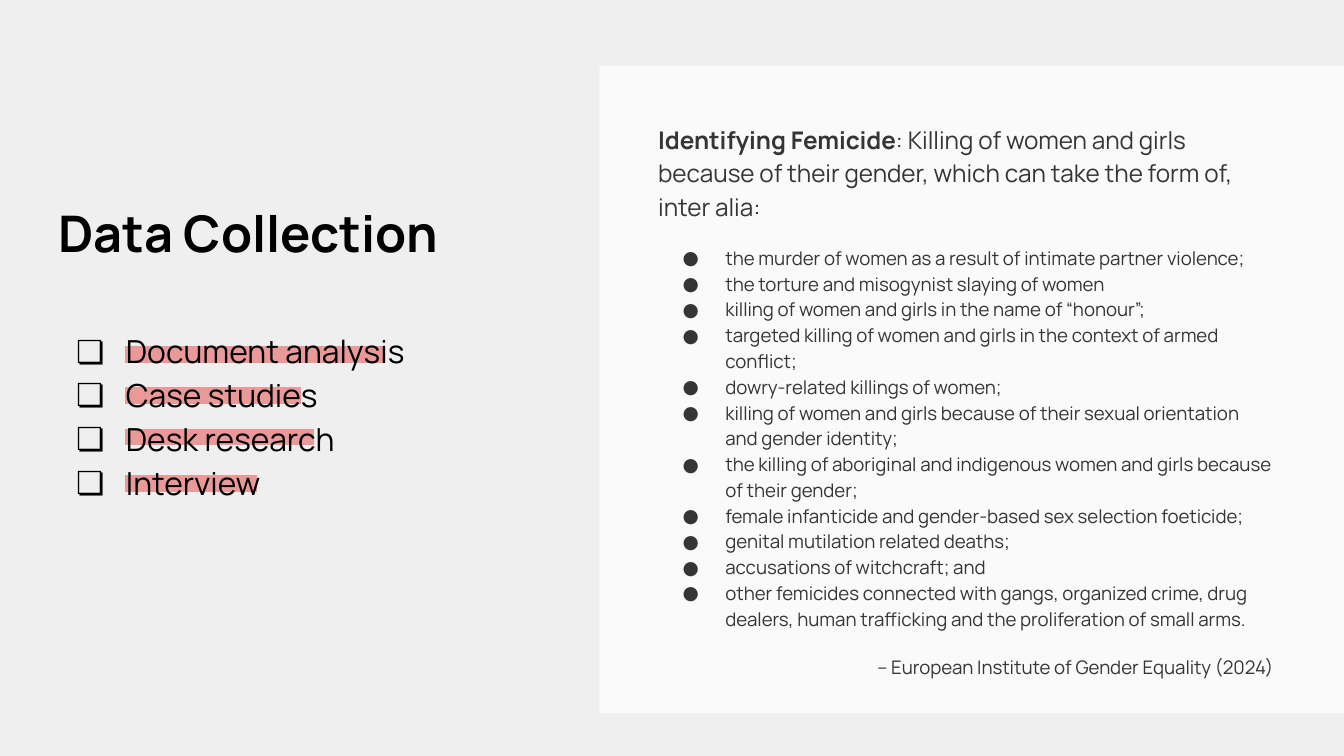
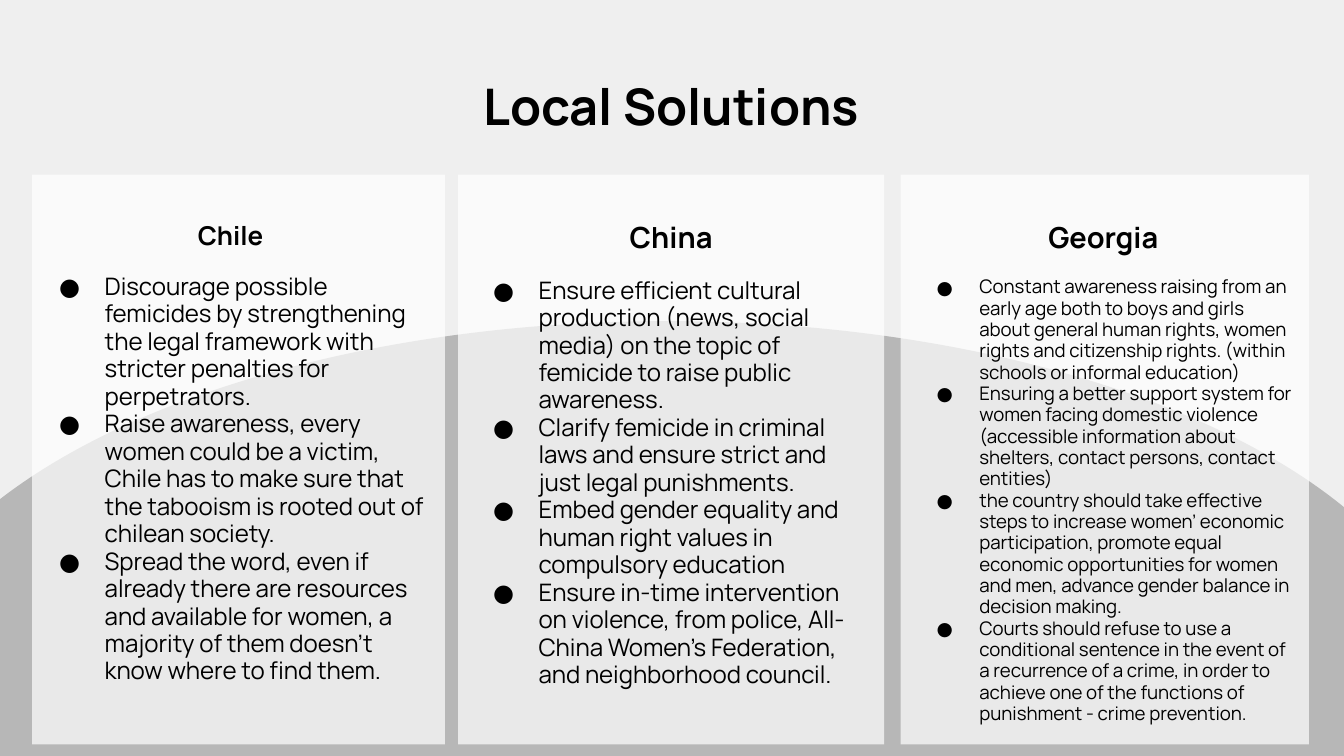
from dataclasses import dataclass

from lxml import etree
from pptx import Presentation
from pptx.dml.color import RGBColor
from pptx.enum import shapes, text
from pptx.oxml.ns import qn
from pptx.util import Cm, Pt


@dataclass(frozen=True)
class Theme:
    font: str = "Manrope"
    background: str = "EFEFEF"
    panel: str = "FFFFFF"
    panel_opacity: int = 70
    hill: str = "B7B7B7"
    marker: str = "EA9999"
    ink: str = "000000"
    soft_ink: str = "353535"
    title: float = 27
    method: float = 17
    lead: float = 13
    solution: float = 12.9
    small: float = 10
    marker_width: float = 9
    inset: float = 0.25
    indent: float = 1.27
    loose: float = 1.15
    tight: float = 0.95


@dataclass(frozen=True)
class Box:
    x: float
    y: float
    w: float
    h: float

    def cm(self):
        return Cm(self.x), Cm(self.y), Cm(self.w), Cm(self.h)


@dataclass(frozen=True)
class Country:
    name: str
    box: Box
    body: Box
    name_size: float
    size: float
    hang: float
    measures: tuple


T = Theme()
SLIDE = Box(0, 0, 25.4, 14.29)
CARD_TOP, CARD_HEIGHT = 3.3, 10.77
BODY_DROP = 0.64

METHODS = [
    ("Document analysis", 0.78, 4.88),
    ("Case studies", 1.55, 3.33),
    ("Desk research", 2.34, 3.58),
    ("Interview", 3.22, 2.49),
]

FORMS = [
    "the murder of women as a result of intimate partner violence;",
    "the torture and misogynist slaying of women",
    "killing of women and girls in the name of “honour”;",
    "targeted killing of women and girls in the context of armed conflict;",
    "dowry-related killings of women;",
    "killing of women and girls because of their sexual orientation and gender identity;",
    "the killing of aboriginal and indigenous women and girls because of their gender;",
    "female infanticide and gender-based sex selection foeticide;",
    "genital mutilation related deaths;",
    "accusations of witchcraft; and",
    "other femicides connected with gangs, organized crime, drug dealers, "
    "human trafficking and the proliferation of small arms.",
]

COUNTRIES = [
    Country("Chile", Box(0.61, CARD_TOP, 7.8, CARD_HEIGHT),
            Box(-0.15, BODY_DROP, 7.8, 9.5), 13.9, T.solution, 0.86, (
        "Discourage possible femicides by strengthening the legal framework "
        "with stricter penalties for perpetrators.",
        "Raise awareness, every women could be a victim, Chile has to make sure "
        "that the tabooism is rooted out of chilean society.",
        "Spread the word, even if already there are resources and available for "
        "women, a majority of them doesn’t know where to find them.",
    )),
    Country("China", Box(8.66, CARD_TOP, 8.05, CARD_HEIGHT),
            Box(0, BODY_DROP, 8.05, 10.34), 15.6, T.solution, 0.86, (
        "Ensure efficient cultural production (news, social media) on the topic "
        "of femicide to raise public awareness.",
        "Clarify femicide in criminal laws and ensure strict and just legal punishments.",
        "Embed gender equality and human right values in compulsory education",
        "Ensure in-time intervention on violence, from police, All-China Women's "
        "Federation, and neighborhood council.",
    )),
    Country("Georgia", Box(17.02, CARD_TOP, 7.72, CARD_HEIGHT),
            Box(-0.03, BODY_DROP, 7.72, 10.34), 15.5, T.small, 0.81, (
        "Constant awareness raising from an early age both to boys and girls about "
        "general human rights, women rights and citizenship rights. (within schools "
        "or informal education)",
        "Ensuring a better support system for women facing domestic violence "
        "(accessible information about shelters, contact persons, contact entities)",
        "the country should take effective steps to increase women’ economic "
        "participation, promote equal economic opportunities for women and men, "
        "advance gender balance in decision making.",
        "Courts should refuse to use a conditional sentence in the event of a "
        "recurrence of a crime, in order to achieve one of the functions of "
        "punishment - crime prevention.",
    )),
]


def rgb(color):
    return RGBColor.from_string(color)


def inside(box, part):
    return Box(box.x + part.x, box.y + part.y, part.w, part.h)


def add_slide(prs):
    s = prs.slides.add_slide(prs.slide_layouts[6])
    s.background.fill.solid()
    s.background.fill.fore_color.rgb = rgb(T.background)
    return s


def add_flat(s, kind, box, color, opacity=100):
    sp = s.shapes.add_shape(kind, *box.cm())
    sp.shadow.inherit = False
    sp.line.fill.background()
    sp.fill.solid()
    sp.fill.fore_color.rgb = rgb(color)
    if opacity < 100:
        clr = sp.fill._xPr.find(qn("a:solidFill"))[0]
        etree.SubElement(clr, qn("a:alpha"), val=str(opacity * 1000))


def add_panel(s, box):
    add_flat(s, shapes.MSO_SHAPE.RECTANGLE, box, T.panel, T.panel_opacity)


def add_marker(s, x, y, length):
    c = s.shapes.add_connector(
        shapes.MSO_CONNECTOR.STRAIGHT, Cm(x), Cm(y), Cm(x + length), Cm(y))
    c.line.color.rgb = rgb(T.marker)
    c.line.width = Pt(T.marker_width)
    etree.SubElement(c._element.spPr, qn("a:effectLst"))


def add_text_frame(s, box):
    tf = s.shapes.add_textbox(*box.cm()).text_frame
    tf.word_wrap = True
    tf.vertical_anchor = text.MSO_ANCHOR.TOP
    tf.margin_left = tf.margin_right = tf.margin_top = tf.margin_bottom = Cm(T.inset)
    return tf


def add_paragraph(tf, spacing=1.0, align=text.PP_ALIGN.LEFT, before=0, after=0):
    p = tf.paragraphs[0]
    if p.runs:
        p = tf.add_paragraph()
    p.alignment = align
    p.line_spacing = spacing
    p.space_before, p.space_after = Pt(before), Pt(after)
    return p


def add_run(p, words, size, color=T.ink, bold=False):
    r = p.add_run()
    r.text = words
    r.font.name = T.font
    r.font.size = Pt(size)
    r.font.bold = bold
    r.font.color.rgb = rgb(color)


def add_bullets(tf, items, size, color, spacing, hang, symbol="●", before=0):
    for i, item in enumerate(items):
        p = add_paragraph(tf, spacing, before=0 if i else before)
        pPr = p._p.get_or_add_pPr()
        pPr.set("marL", str(Cm(T.indent)))
        pPr.set("indent", str(-Cm(hang)))
        clr = etree.SubElement(pPr, qn("a:buClr"))
        etree.SubElement(clr, qn("a:srgbClr"), val=color)
        etree.SubElement(pPr, qn("a:buFont"), typeface=T.font)
        etree.SubElement(pPr, qn("a:buChar"), char=symbol)
        add_run(p, item, size, color)


def add_title(s, box, words, align=text.PP_ALIGN.LEFT):
    p = add_paragraph(add_text_frame(s, box), align=align)
    add_run(p, words, T.title, bold=True)


def add_methods(s, box):
    for _, drop, length in METHODS:
        add_marker(s, box.x + 1.5, box.y + drop, length)
    tf = add_text_frame(s, box)
    add_bullets(tf, [m[0] for m in METHODS], T.method, T.ink, T.loose, 0.94, "❏")


def add_definition(s, box):
    add_panel(s, box)
    tf = add_text_frame(s, inside(box, Box(0.86, 0.79, 12.12, 11.1)))
    p = add_paragraph(tf, T.loose)
    add_run(p, "Identifying Femicide", T.lead, T.soft_ink, True)
    add_run(p, ": Killing of women and girls because of their gender, "
               "which can take the form of, inter alia:", T.lead, T.soft_ink)
    add_bullets(tf, FORMS, T.small, T.soft_ink, T.loose, 0.81, before=12)
    p = add_paragraph(tf, T.loose, text.PP_ALIGN.RIGHT, 12, 12)
    add_run(p, "– European Institute of Gender Equality (2024)", T.small, T.soft_ink)


def add_country(s, country):
    add_panel(s, country.box)
    tf = add_text_frame(s, inside(country.box, country.body))
    p = add_paragraph(tf, T.tight, text.PP_ALIGN.CENTER)
    add_run(p, country.name, country.name_size, bold=True)
    add_bullets(tf, country.measures, country.size, T.ink, T.tight,
                country.hang, before=12)


def build_data_collection(prs):
    s = add_slide(prs)
    add_methods(s, Box(0.86, 5.92, 7.24, 4.9))
    add_definition(s, Box(11.33, 1.24, 14.07, 12.24))
    add_title(s, Box(0.86, 3.58, 23.67, 1.73), "Data Collection")


def build_local_solutions(prs):
    s = add_slide(prs)
    add_flat(s, shapes.MSO_SHAPE.OVAL, Box(-2.24, 6.07, 29.69, 14.27), T.hill)
    for country in COUNTRIES:
        add_country(s, country)
    add_title(s, Box(8.66, 1.17, 8.05, 1.73), "Local Solutions", text.PP_ALIGN.CENTER)


def main():
    prs = Presentation()
    prs.slide_width, prs.slide_height = Cm(SLIDE.w), Cm(SLIDE.h)
    build_data_collection(prs)
    build_local_solutions(prs)
    prs.save("out.pptx")


if __name__ == "__main__":
    main()
